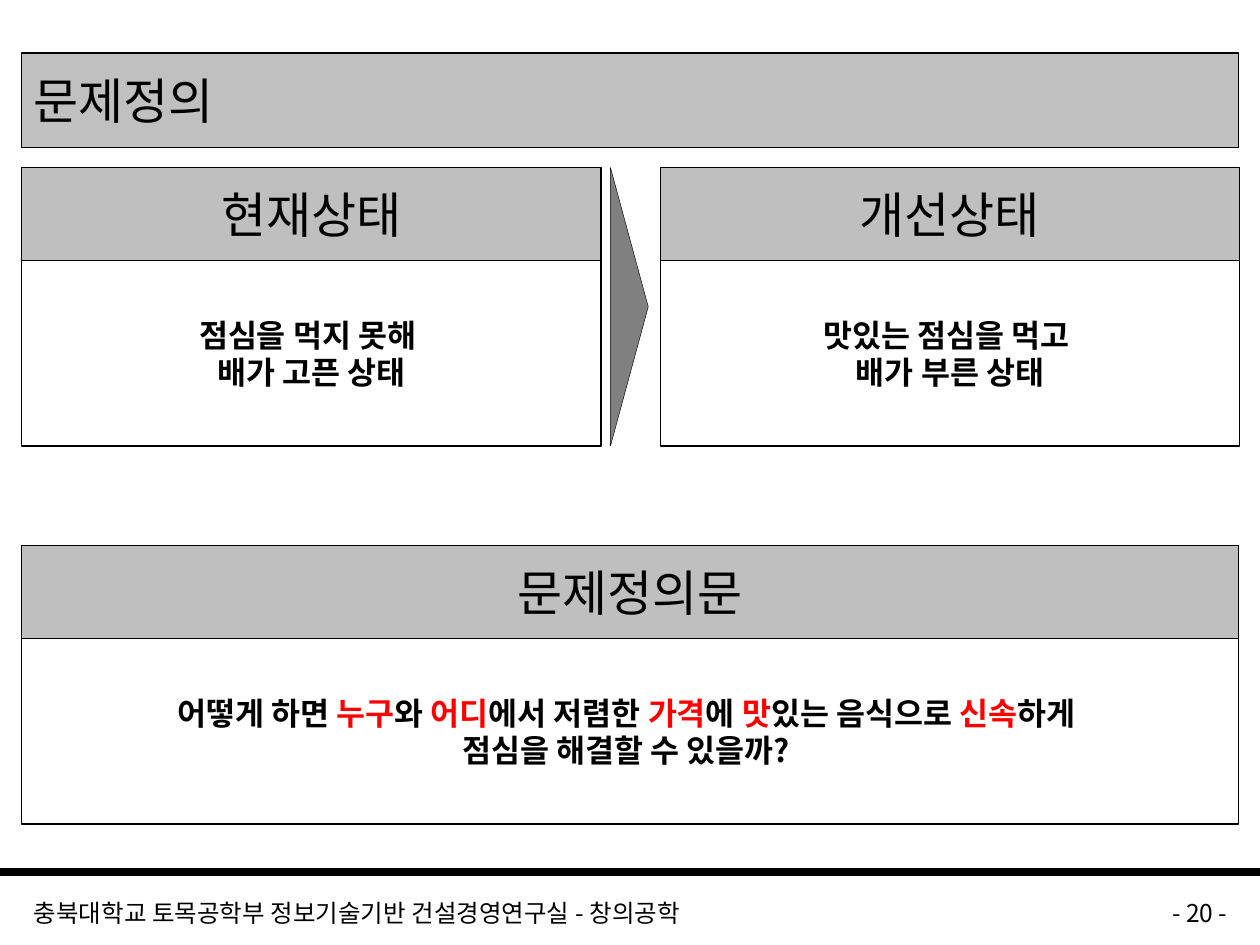
import pptx
import pptx.util
import pptx.dml.color
import pptx.enum.shapes
import pptx.enum.text
import pptx.oxml.ns
import lxml.etree

Inches = pptx.util.Inches
Pt = pptx.util.Pt
Shape = pptx.enum.shapes.MSO_SHAPE
Align = pptx.enum.text.PP_ALIGN
Anchor = pptx.enum.text.MSO_ANCHOR
qn = pptx.oxml.ns.qn

title = "문제정의"
states = [
    ("현재상태", ["점심을 먹지 못해 ", "배가 고픈 상태"]),
    ("개선상태", ["맛있는 점심을 먹고 ", "배가 부른 상태"]),
]
problem = ("문제정의문", [
    "어떻게 하면 *누구*와 *어디*에서 저렴한 *가격*에 *맛*있는 음식으로 *신속*하게 ",
    "점심을 해결할 수 있을까? ",
])
footer = "충북대학교 토목공학부 정보기술기반 건설경영연구실 - 창의공학"
page = "- 20 -"

theme = {
    "font": "Noto Sans CJK KR",
    "ink": "000000", "mark": "FF0000",
    "title": "C0C0C0", "head": "BFBFBF", "arrow": "808080",
    "large": 28, "body": 18, "small": 14,
}

wide, edge = 10, 0.17
full = wide - 2 * edge
half, gap = 4.6, 0.47
cap, room = 0.74, 1.47
thick = 0.3

deck = pptx.Presentation()
deck.slide_width, deck.slide_height = Inches(wide), Inches(7.5)
slide = deck.slides.add_slide(deck.slide_layouts[6])


def tint(name):
    return pptx.dml.color.RGBColor.from_string(theme[name])


def write(shape, lines, size, align, bold=False, hang=0):
    frame = shape.text_frame
    frame.word_wrap = True
    for i, line in enumerate(lines):
        para = frame.add_paragraph() if i else frame.paragraphs[0]
        para.alignment = align
        if hang:
            props = para._p.get_or_add_pPr()
            props.set("marL", str(Inches(hang)))
            props.set("indent", str(-Inches(hang)))
        for j, part in enumerate(line.split("*")):
            run = para.add_run()
            run.text = part
            font = run.font
            font.name, font.size, font.bold = theme["font"], Pt(theme[size]), bold
            font.color.rgb = tint("mark" if j % 2 else "ink")
            east = lxml.etree.SubElement(run._r.get_or_add_rPr(), qn("a:ea"))
            east.set("typeface", theme["font"])


def block(kind, x, y, w, h, fill=None, line=0.75):
    shape = slide.shapes.add_shape(kind, Inches(x), Inches(y), Inches(w), Inches(h))
    shape.shadow.inherit = False
    if fill:
        shape.fill.solid()
        shape.fill.fore_color.rgb = tint(fill)
    else:
        shape.fill.background()
    shape.line.color.rgb = tint("ink")
    shape.line.width = Pt(line)
    shape.text_frame.vertical_anchor = Anchor.MIDDLE
    return shape


def panel(x, y, w, head, lines):
    top = block(Shape.RECTANGLE, x, y, w, cap, "head")
    write(top, [head], "large", Align.CENTER, hang=0.38)
    base = block(Shape.RECTANGLE, x, y + cap, w, room)
    write(base, lines, "body", Align.CENTER, bold=True, hang=0.38)


def note(x, w, text, align):
    box = slide.shapes.add_textbox(Inches(x), Inches(7.08), Inches(w), Inches(0.25))
    write(box, [text], "small", align)


rule = slide.shapes.add_connector(
    pptx.enum.shapes.MSO_CONNECTOR.STRAIGHT,
    Inches(0), Inches(6.92), Inches(wide), Inches(6.92))
rule.line.color.rgb = tint("ink")
rule.line.width = Pt(4.5)
lxml.etree.SubElement(rule._element.spPr, qn("a:effectLst"))

write(block(Shape.RECTANGLE, edge, 0.42, full, 0.75, "title"),
      [title], "large", Align.LEFT)

for i, (head, lines) in enumerate(states):
    panel(edge + i * (half + gap), 1.33, half, head, lines)

tall = cap + room
mid = edge + half + gap / 2 - 0.01
arrow = block(Shape.ISOSCELES_TRIANGLE, mid - tall / 2,
              1.33 + (tall - thick) / 2, tall, thick, "arrow", 0.25)
arrow.rotation = 90

panel(edge, 4.33, full, *problem)
note(edge, 7.83, footer, Align.LEFT)
note(8.17, 1.67, page, Align.RIGHT)

deck.save("out.pptx")
